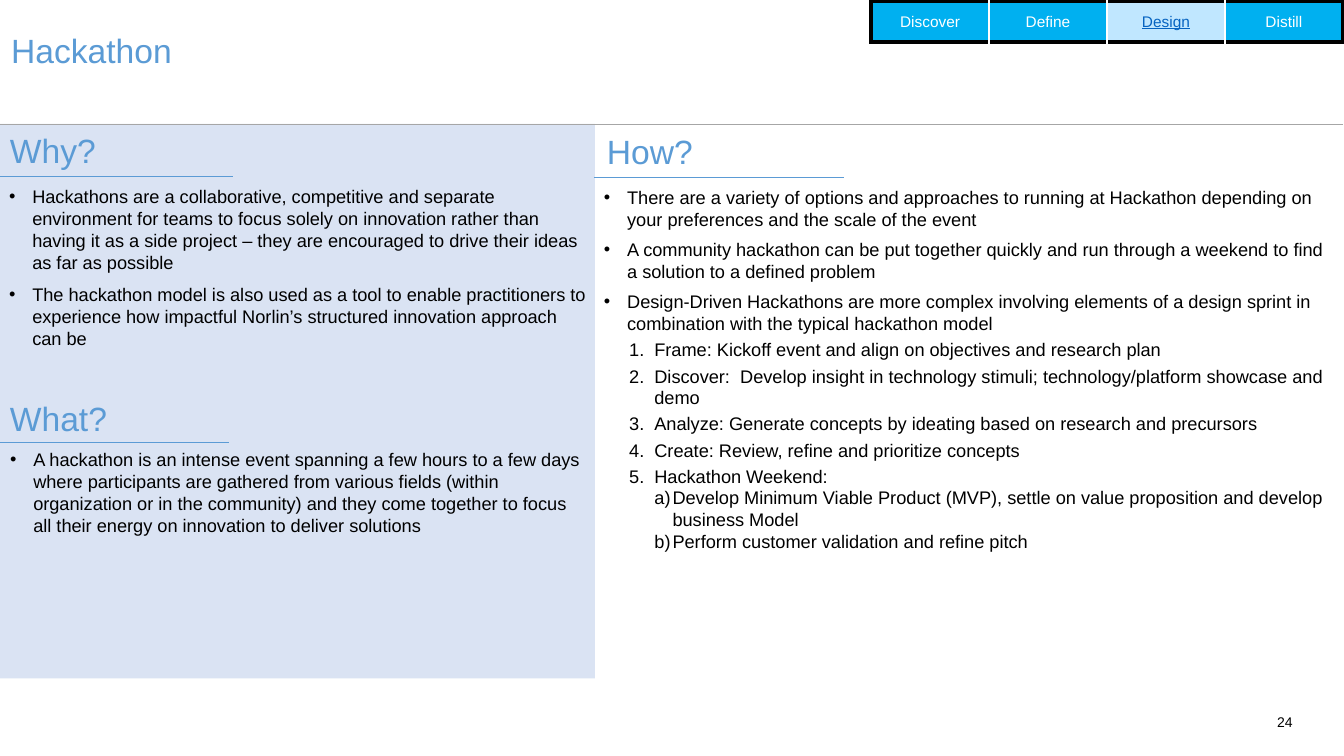
from pptx import Presentation
from pptx.dml.color import RGBColor
from pptx.enum.shapes import MSO_CONNECTOR, MSO_SHAPE
from pptx.enum.text import MSO_ANCHOR, MSO_AUTO_SIZE, PP_ALIGN
from pptx.oxml.ns import qn
from pptx.util import Inches, Pt
from lxml.etree import SubElement

BLACK = RGBColor(0x00, 0x00, 0x00)
WHITE = RGBColor(0xFF, 0xFF, 0xFF)
BLUE = RGBColor(0x5B, 0x9B, 0xD5)
PANEL = RGBColor(0xDA, 0xE3, 0xF3)
GREY = RGBColor(0xA6, 0xA6, 0xA6)
TAB = RGBColor(0x00, 0xB0, 0xF0)
TAB_ACTIVE = RGBColor(0xC0, 0xE7, 0xFF)
LINK = RGBColor(0x05, 0x63, 0xC1)

HEADING = {"size": Pt(24), "name": "Arial", "bold": False}
BODY = {"size": Pt(13), "name": "Arial", "bold": False}
SMALL = {"size": Pt(11), "name": "Arial", "bold": False}
NUMBER = {"size": Pt(10), "name": "Arial", "bold": False}

# List styles: level, left margin, hanging indent, bullet tag, bullet attributes
BULLET = (0, 0.23, 0.23, "a:buChar", {"char": "•"})
STEP = (1, 0.5, 0.25, "a:buAutoNum", {"type": "arabicPeriod"})
SUBSTEP = (2, 0.68, 0.18, "a:buAutoNum", {"type": "alphaLcParenR"})


def place(box, left, top, width, height):
    box.left, box.top, box.width, box.height = map(Inches, (left, top, width, height))
    frame = box.text_frame
    frame.word_wrap = True
    frame.auto_size = MSO_AUTO_SIZE.NONE
    frame.vertical_anchor = MSO_ANCHOR.TOP
    return frame


def write(para, text, style, color, align=PP_ALIGN.LEFT):
    para.alignment = align
    para.space_before = Pt(0)
    span = para.add_run()
    span.text = text
    for name, value in style.items():
        setattr(span.font, name, value)
    span.font.color.rgb = color
    return span


deck = Presentation()
deck.slide_width, deck.slide_height = Inches(13.33), Inches(7.5)
page = deck.slides.add_slide(deck.slide_layouts.get_by_name("Comparison"))
holders = {holder.placeholder_format.idx: holder for holder in page.placeholders}
unused = holders[3].element
unused.getparent().remove(unused)

# Left panel, behind the text
panel = page.shapes.add_shape(MSO_SHAPE.RECTANGLE, 0, Inches(1.23), Inches(5.9), Inches(5.5))
panel.shadow.inherit = False
panel.fill.solid()
panel.fill.fore_color.rgb = PANEL
panel.line.fill.background()
panel.element.getparent().insert(2, panel.element)

# Title and section headings
frame = place(page.shapes.title, 0.01, 0.25, 8.16, 0.5)
write(frame.paragraphs[0], "Hackathon", HEADING, BLUE)
for text, left, top in (("Why?", 0, 1.24), ("What?", 0, 3.9), ("How?", 5.92, 1.25)):
    frame = place(page.shapes.add_textbox(0, 0, 0, 0), left, top, 1.22, 0.51)
    write(frame.paragraphs[0], text, HEADING, BLUE)

# Rules under the title and the headings
for left, right, top, color in (
    (-0.02, 13.32, 1.23, GREY),
    (-0.02, 2.31, 1.75, BLUE),
    (-0.02, 2.27, 4.39, BLUE),
    (5.89, 8.37, 1.76, BLUE),
):
    rule = page.shapes.add_connector(
        MSO_CONNECTOR.STRAIGHT, Inches(left), Inches(top), Inches(right), Inches(top))
    rule.line.color.rgb = color
    rule.line.width = Pt(0.5)
    SubElement(rule.element.spPr, qn("a:effectLst"))

# Lists: placeholder, place, then (list style, space after, text)
lists = (
    (2, (-0.01, 1.79, 5.93, 1.73), (
        (BULLET, 7.3, "Hackathons are a collaborative, competitive and separate environment for "
         "teams to focus solely on innovation rather than having it as a side project – they are "
         "encouraged to drive their ideas as far as possible"),
        (BULLET, 7.3, "The hackathon model is also used as a tool to enable practitioners to "
         "experience how impactful Norlin’s structured innovation approach can be"),
    )),
    (1, (0, 4.4, 5.89, 0.98), (
        (BULLET, 0, "A hackathon is an intense event spanning a few hours to a few days where "
         "participants are gathered from various fields (within organization or in the community) "
         "and they come together to focus all their energy on innovation to deliver solutions"),
    )),
    (4, (5.89, 1.8, 7.43, 3.76), (
        (BULLET, 6, "There are a variety of options and approaches to running at Hackathon "
         "depending on your preferences and the scale of the event"),
        (BULLET, 6, "A community hackathon can be put together quickly and run through a weekend "
         "to find a solution to a defined problem"),
        (BULLET, 3, "Design-Driven Hackathons are more complex involving elements of a design "
         "sprint in combination with the typical hackathon model"),
        (STEP, 3, "Frame: Kickoff event and align on objectives and research plan"),
        (STEP, 3, "Discover:  Develop insight in technology stimuli; technology/platform showcase "
         "and demo"),
        (STEP, 3, "Analyze: Generate concepts by ideating based on research and precursors"),
        (STEP, 3, "Create: Review, refine and prioritize concepts"),
        (STEP, 0, "Hackathon Weekend:"),
        (SUBSTEP, 0, "Develop Minimum Viable Product (MVP), settle on value proposition and "
         "develop business Model"),
        (SUBSTEP, 0, "Perform customer validation and refine pitch"),
    )),
)
for idx, area, items in lists:
    frame = place(holders[idx], *area)
    for index, ((level, margin, hanging, tag, bullet), after, text) in enumerate(items):
        para = frame.add_paragraph() if index else frame.paragraphs[0]
        para.level = level
        para.space_after = Pt(after)
        write(para, text, BODY, BLACK)
        properties = para._p.get_or_add_pPr()
        properties.set("marL", str(Inches(margin)))
        properties.set("indent", str(-Inches(hanging)))
        SubElement(properties, qn("a:buFont"), typeface="Arial")
        SubElement(properties, qn(tag), bullet)

# Phase tabs
phases = ("Discover", "Define", "Design", "Distill")
grid = page.shapes.add_table(
    1, len(phases), Inches(8.64), Inches(0.01), Inches(4.68), Inches(0.41)).table
for column, phase in enumerate(phases):
    active = phase == "Design"
    cell = grid.cell(0, column)
    cell.vertical_anchor = MSO_ANCHOR.MIDDLE
    span = write(cell.text_frame.paragraphs[0], phase, SMALL,
                 LINK if active else WHITE, PP_ALIGN.CENTER)
    span.font.underline = active
    outer = {"a:lnL": column == 0, "a:lnR": column == len(phases) - 1,
             "a:lnT": True, "a:lnB": True}
    for side, thick in outer.items():
        border = SubElement(cell._tc.get_or_add_tcPr(), qn(side), w=str(Pt(3 if thick else 1)))
        ink = SubElement(border, qn("a:solidFill"))
        SubElement(ink, qn("a:srgbClr"), val=str(BLACK if thick else WHITE))
    cell.fill.solid()
    cell.fill.fore_color.rgb = TAB_ACTIVE if active else TAB

# Page number
frame = place(page.shapes.add_textbox(0, 0, 0, 0), 12.48, 7.08, 0.34, 0.17)
frame.margin_left = frame.margin_top = frame.margin_right = frame.margin_bottom = 0
write(frame.paragraphs[0], "24", NUMBER, BLACK, PP_ALIGN.RIGHT)

deck.save("out.pptx")
